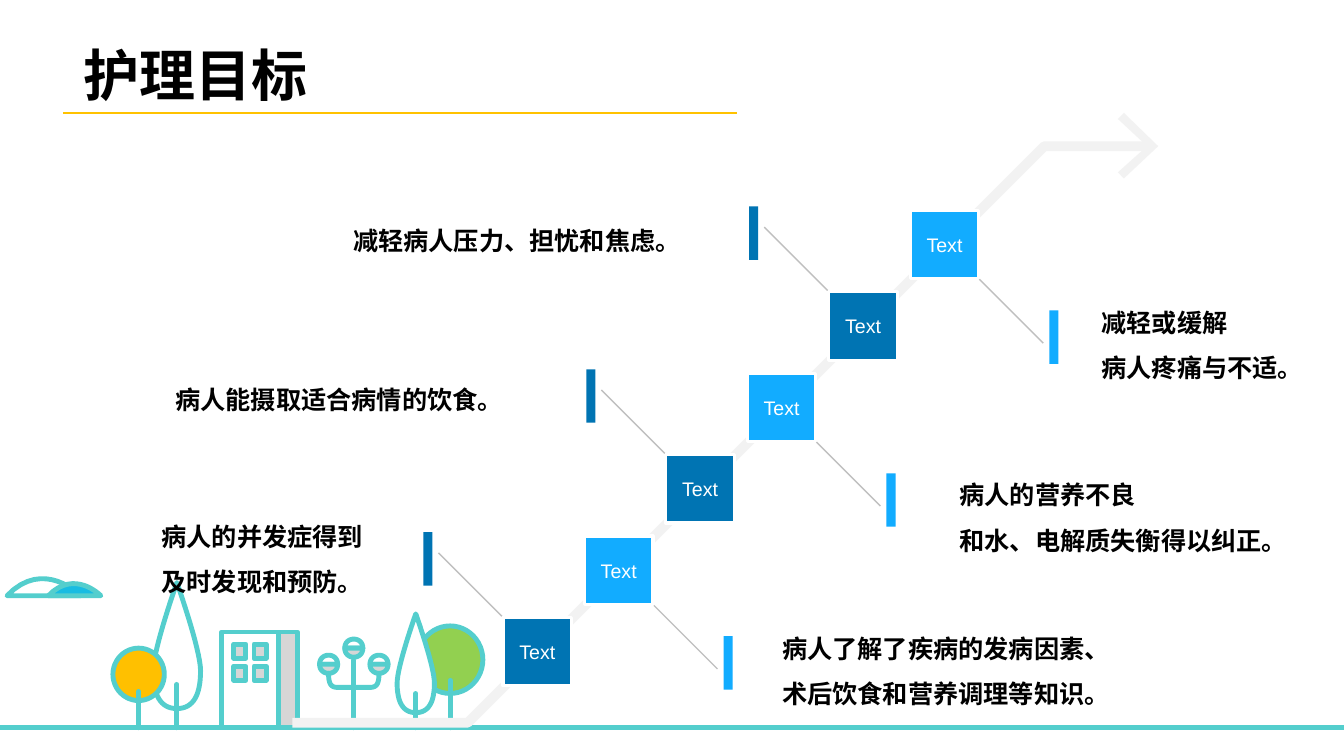
"""Build the nursing goals slide: a rising staircase of six goals above a small townscape."""
from itertools import pairwise, product
from math import comb

from lxml.etree import SubElement
from pptx import Presentation
from pptx.dml.color import RGBColor
from pptx.enum.shapes import MSO_CONNECTOR, MSO_SHAPE
from pptx.enum.text import MSO_ANCHOR, PP_ALIGN
from pptx.oxml.ns import qn
from pptx.util import Inches, Pt

THEME = {
    "teal": "54CECD", "white": "FFFFFF", "gray": "D6D6D6", "road": "F2F2F2",
    "leader": "BFBFBF", "black": "000000", "rule": "FFC200", "leaf": "92D050",
    "orange": "FFC000", "cloud": "18BCE2", "dark": "0074B3", "light": "12ACFF",
    "latin": "Arial", "chinese": "Noto Sans CJK SC",
    "title": 40, "body": 18, "label": 14,
}

deck = Presentation()
deck.slide_width, deck.slide_height = Inches(13.333), Inches(7.5)
page = deck.slides.add_slide(deck.slide_layouts[6])
shapes = page.shapes
CELL = deck.slide_height / 75
COLUMNS = deck.slide_width / CELL


def grid(*cells):
    return [round(cell * CELL) for cell in cells]


def draw(kind, geometry, fill=None, line=None, width=3.5, closed=True):
    """Draw a preset, a line or a chain of Bezier segments given in grid cells."""
    if kind == "line":
        item = shapes.add_connector(MSO_CONNECTOR.STRAIGHT, *grid(*geometry))
    elif kind == "curve":
        points = []
        for segment in geometry:
            degree = len(segment) - 1
            count = 1 if degree == 1 else 16
            for step in range(count + 1):
                share = step / count
                weights = [comb(degree, k) * share**k * (1 - share)**(degree - k)
                           for k in range(degree + 1)]
                points.append(grid(*(sum(weight * point[axis] for weight, point in zip(weights, segment))
                                     for axis in (0, 1))))
        builder = shapes.build_freeform(*points[0])
        builder.add_line_segments(points[1:], close=closed)
        item = builder.convert_to_shape()
    else:
        item = shapes.add_shape(kind, *grid(*geometry))
    if kind != "line":
        if fill:
            item.fill.solid()
            item.fill.fore_color.rgb = RGBColor.from_string(THEME[fill])
        else:
            item.fill.background()
    if line:
        item.line.color.rgb = RGBColor.from_string(THEME[line])
        item.line.width = Pt(width)
        if line == "teal":
            outline = item._element.spPr.find(qn("a:ln"))
            outline.set("cap", "rnd")
            SubElement(outline, qn("a:round"))
    else:
        item.line.fill.background()
    SubElement(item._element.spPr, qn("a:effectLst"))
    return item


GROUND = 72.2
draw("line", (0, GROUND, COLUMNS, GROUND), line="teal")

plants = [
    ("round", 41.4, 62.1, 6.5, 6.7, 67.5, "leaf"),
    ("cypress", 15.2, 57.8, 4.7, 12.5, 67.9, "white"),
    ("round", 11.2, 64.3, 5.1, 5.2, 68.6, "orange"),
    ("cypress", 39.4, 60.9, 3.7, 9.8, 68.8, "white"),
]
for form, left, top, width, height, trunk_top, color in plants:
    middle = left + width / 2
    if form == "round":
        draw(MSO_SHAPE.OVAL, (left, top, width, height), color, "teal")
    else:
        crown = [((.5, 0), (.5, 0), (0, .53), (0, .7)), ((0, .7), (0, .89), (.15, 1), (.5, 1)),
                 ((.5, 1), (.85, 1), (1, .89), (1, .7)), ((1, .7), (1, .53), (.5, 0), (.5, 0))]
        draw("curve", [[(left + x * width, top + y * height) for x, y in part] for part in crown],
             color, "teal")
    draw("line", (middle, GROUND, middle, trunk_top), line="teal")

POST = 35.1
draw("line", (POST, GROUND, POST, 65.5), line="teal")
for x, y in ((POST - 2.5, 65.9), (POST + 2.5, 65.9), (POST, 64.3)):
    for rise, color in ((-1.2, "white"), (1.2, "gray")):
        draw("curve", [((x - .9, y), (x - .9, y + rise), (x + .9, y + rise), (x + .9, y))], color, "teal")
for side in (-1, 1):
    elbow = POST + 1.6 * side
    end = POST + 2.5 * side
    draw("curve", [((POST, 68.2), (elbow, 68.2)),
                   ((elbow, 68.2), (elbow + .7 * side, 68.2), (end, 67.8), (end, 66.8))],
         line="teal", closed=False)

for left, right, peak, color in ((.7, 8, 55.3, "white"), (4.8, 10, 56.4, "cloud")):
    draw("curve", [((right, 59.1), (right, 59.1), ((left + right) / 2, peak), (left, 59.1))], color, "teal")

for left, width, color in ((22, 5.6, "white"), (27.6, 1.9, "gray")):
    draw(MSO_SHAPE.RECTANGLE, (left, 62.7, width, 9.5), color, "teal")
for top, left in product((63.9, 66.1), (23.2, 25.2)):
    draw(MSO_SHAPE.RECTANGLE, (left, top, 1.2, 1.4), "gray", "teal")

draw("line", (6.3, 11.2, 73.1, 11.2), line="rule", width=1.5)
road = [(29, 71.7), (46.4, 71.7), (103.6, 14.5), (114.1, 14.5)]
draw("curve", list(pairwise(road)), line="road", width=7, closed=False)
arrow = [(111.5, 11.2), (110.9, 11.8), (113.8, 14.5), (110.9, 17.1), (111.5, 17.7), (114.9, 14.5)]
draw("curve", list(pairwise(arrow)), "road")

STRIDE, SQUARE = 8.08, 6.8
labels = []
for step in range(6):
    x, y = 53.3 + step * STRIDE, 64.65 - step * STRIDE
    side, color = ((-1, "dark"), (1, "light"))[step % 2]
    draw("line", (x + 1.2 * side, y + 1.2 * side, x + 9.8 * side, y + 9.8 * side), line="leader", width=1)
    box = draw(MSO_SHAPE.RECTANGLE, (x - SQUARE / 2, y - SQUARE / 2, SQUARE, SQUARE), color, "white", 2.25)
    labels.append((box, ["Text"], "label", "latin", "white", False, PP_ALIGN.CENTER, 1))
    draw(MSO_SHAPE.RECTANGLE, (x + 10.85 * side - .45, y + 9.2 * side - 2.65, .9, 5.3), color)

goals = [
    (76.6, 60.8, 56, 8.3, PP_ALIGN.LEFT, ["病人了解了疾病的发病因素、", "术后饮食和营养调理等知识。"]),
    (16.4, 36.1, 56, 8.3, PP_ALIGN.LEFT, ["病人能摄取适合病情的饮食。"]),
    (108.3, 28.5, 25, 14.6, PP_ALIGN.LEFT, ["减轻或缓解", "病人疼痛与不适。"]),
    (2, 49.7, 35, 8.3, PP_ALIGN.RIGHT, ["病人的并发症得到", "及时发现和预防。"]),
    (94.2, 45.6, 37, 8.3, PP_ALIGN.LEFT, ["病人的营养不良", "和水、电解质失衡得以纠正。"]),
    (23, 20.4, 45.5, 8.3, PP_ALIGN.RIGHT, ["减轻病人压力、担忧和焦虑。"]),
]
for left, top, width, height, align, lines in goals:
    box = shapes.add_textbox(*grid(left, top, width, height))
    labels.append((box, lines, "body", "latin", "black", True, align, 1.5))
title = shapes.add_textbox(*grid(7.3, 3.5, 50.1, 7.7))
labels.append((title, ["护理目标"], "title", "chinese", "black", True, PP_ALIGN.LEFT, 1))

for box, lines, size, face, color, bold, align, spacing in labels:
    frame = box.text_frame
    frame.word_wrap = True
    frame.vertical_anchor = MSO_ANCHOR.MIDDLE if size == "label" else MSO_ANCHOR.TOP
    frame.text = "\n".join(lines)
    for para in frame.paragraphs:
        para.alignment = align
        para.line_spacing = spacing
        para.font.size = Pt(THEME[size])
        para.font.bold = bold
        para.font.color.rgb = RGBColor.from_string(THEME[color])
        para.font.name = THEME[face]
        SubElement(para._p.pPr.find(qn("a:defRPr")), qn("a:ea"), typeface=THEME["chinese"])

deck.save("out.pptx")
